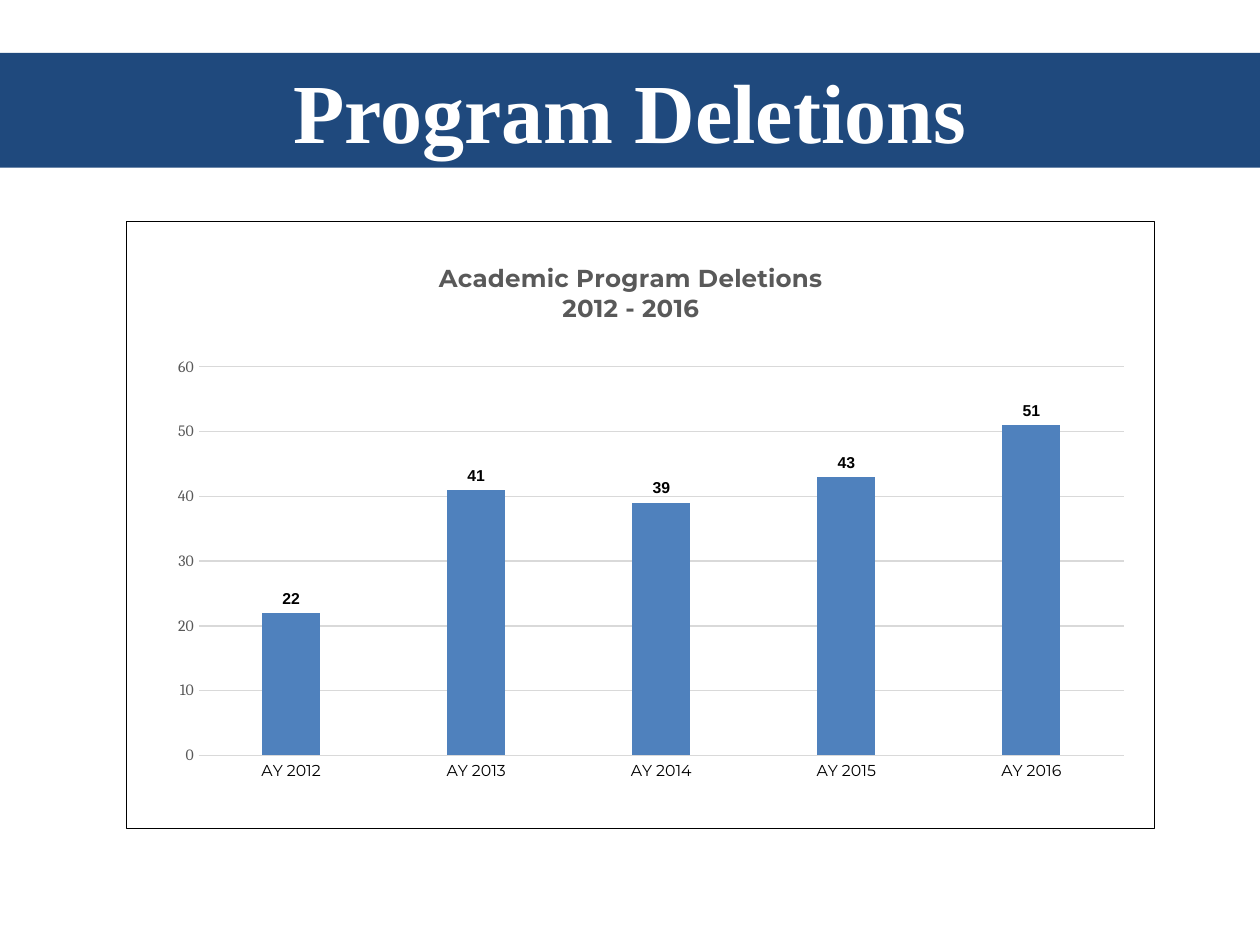
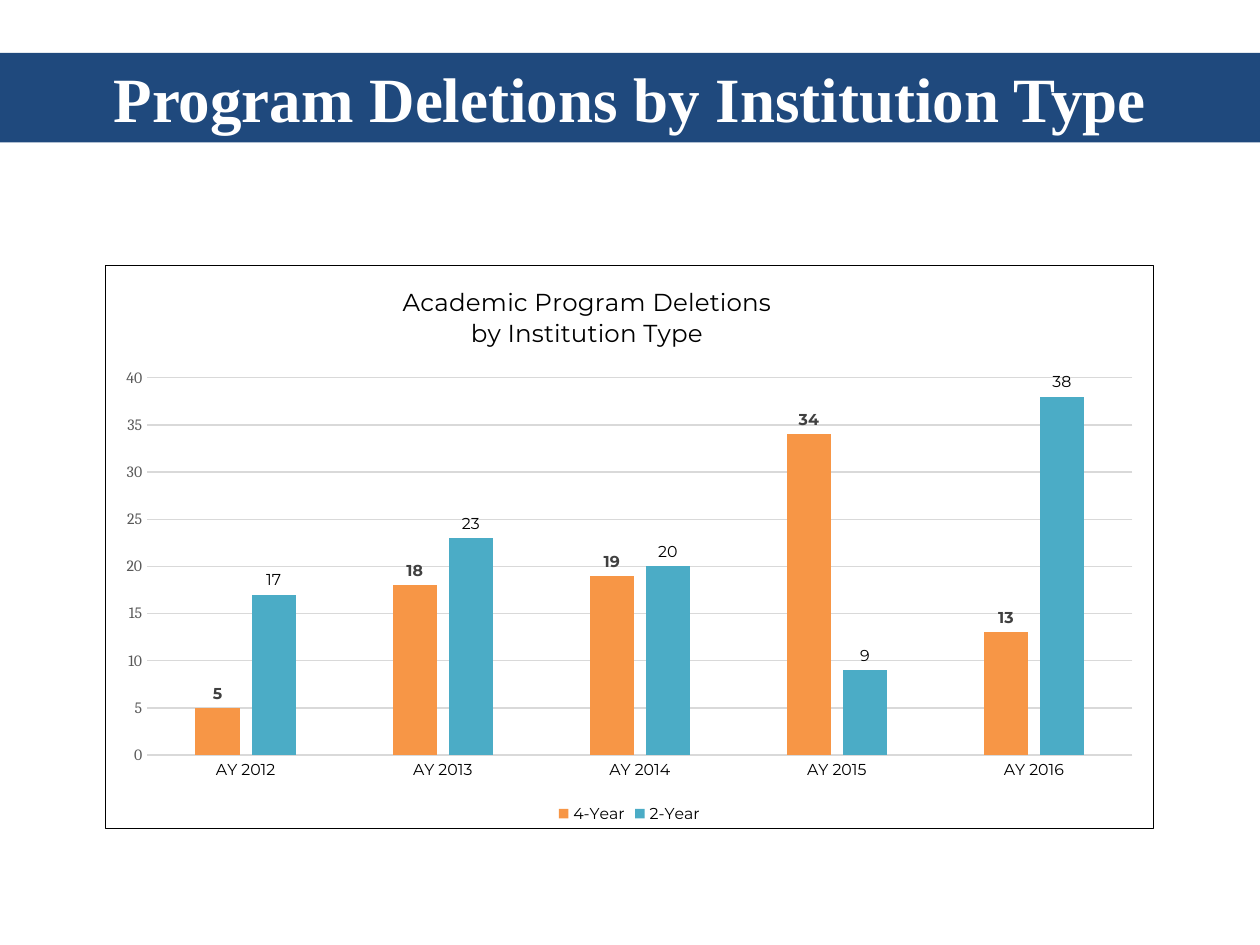
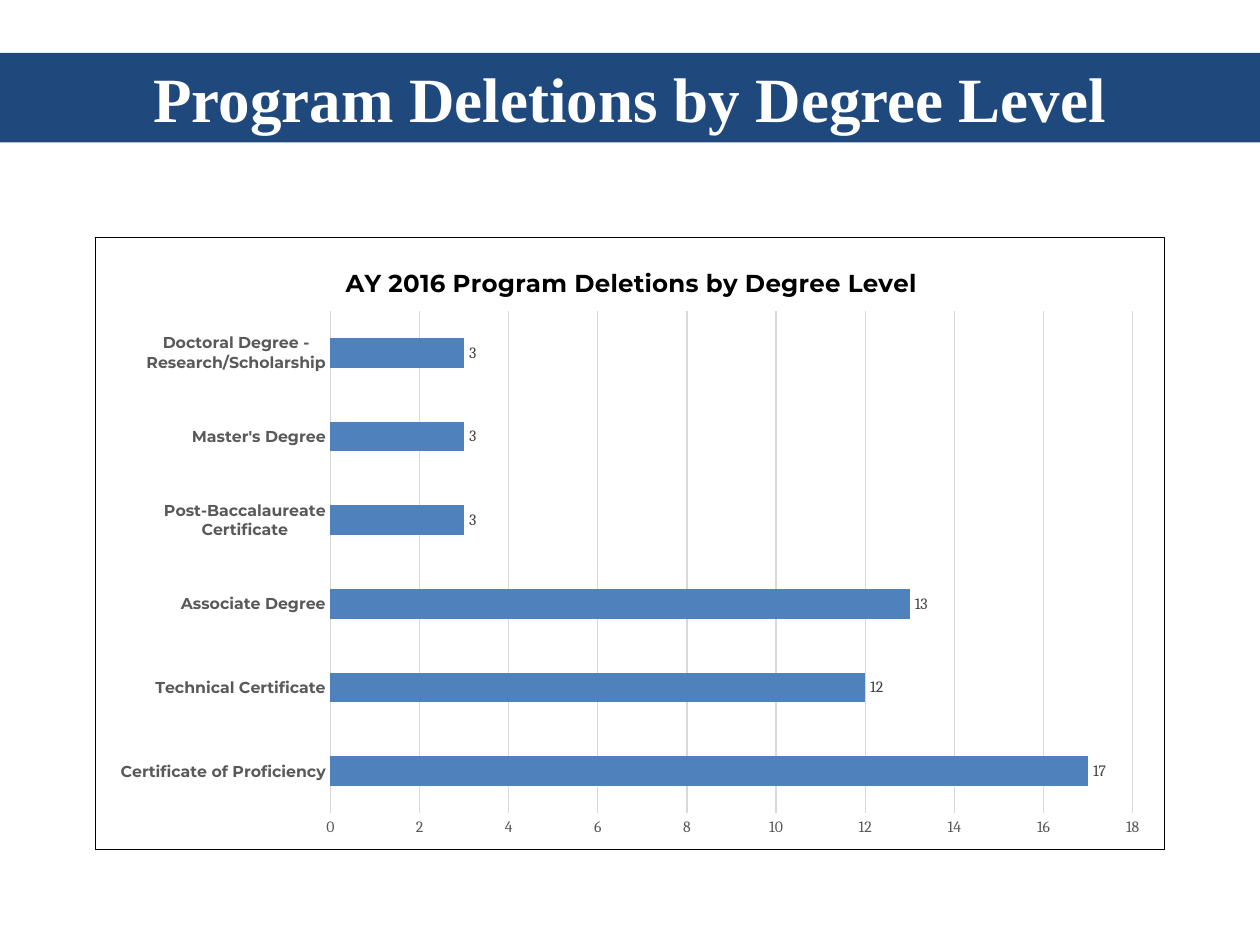
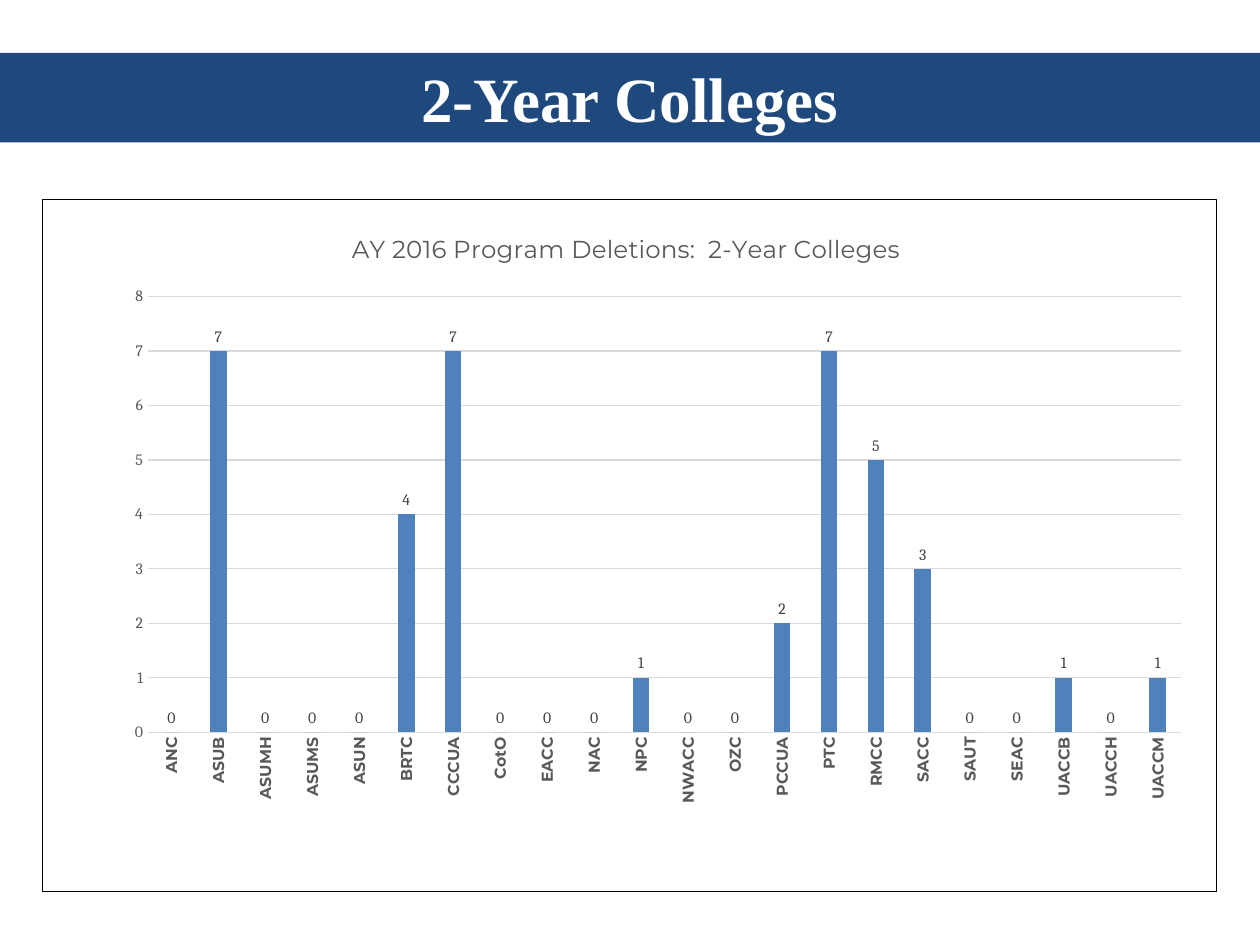
from lxml import etree
from pptx import Presentation, util as u
from pptx.chart.data import CategoryChartData
from pptx.dml.color import RGBColor
from pptx.enum import chart as ce, dml, shapes, text
from pptx.oxml.ns import qn

NAVY = RGBColor(0x1F, 0x49, 0x7D)
BLUE = RGBColor(0x4F, 0x81, 0xBD)
ORANGE = RGBColor(0xF7, 0x96, 0x46)
TEAL = RGBColor(0x4B, 0xAC, 0xC6)
WHITE = RGBColor(0xFF, 0xFF, 0xFF)
BLACK = RGBColor(0, 0, 0)
DARK = RGBColor(0x40, 0x40, 0x40)
GRAY = RGBColor(0x59, 0x59, 0x59)
PALE = RGBColor(0xD9, 0xD9, 0xD9)

WIDTH, HEIGHT = u.Inches(10), u.Inches(7.5)
HAIRLINE = u.Pt(0.75)
BAND_TOP = 0.42
YEARS = [f"AY {year}" for year in range(2012, 2017)]
COLLEGES = {
    "ANC": 0, "ASUB": 7, "ASUMH": 0, "ASUMS": 0, "ASUN": 0, "BRTC": 4,
    "CCCUA": 7, "CotO": 0, "EACC": 0, "NAC": 0, "NPC": 1, "NWACC": 0,
    "OZC": 0, "PCCUA": 2, "PTC": 7, "RMCC": 5, "SACC": 3, "SAUT": 0,
    "SEAC": 0, "UACCB": 1, "UACCH": 0, "UACCM": 1,
}
DEGREES = {
    "Certificate of Proficiency": 17,
    "Technical Certificate": 12,
    "Associate Degree": 13,
    "Post-Baccalaureate Certificate": 3,
    "Master's Degree": 3,
    "Doctoral Degree - Research/Scholarship": 3,
}


def style(name, size, color, bold=False):
    return {"name": name, "size": u.Pt(size), "bold": bold, "color": color}


VALUE_STYLE = style("Cambria", 9, GRAY)
LABEL_STYLE = style("Cambria", 9, DARK)
YEAR_STYLE = style("Montserrat", 9, BLACK)
GROUP_STYLE = style("Montserrat", 9, GRAY, True)

SLIDES = [
    {
        "heading": "Program Deletions", "heading_size": 48, "band_height": 0.91,
        "box": (1, 1.75, 8.17, 4.83), "kind": ce.XL_CHART_TYPE.COLUMN_CLUSTERED,
        "title": ["Academic Program Deletions", "2012 - 2016"],
        "title_style": style("Montserrat", 14, GRAY, True), "title_at": (0.3, 0.06),
        "plot": (0.07, 0.24, 0.9, 0.64), "gap": 219, "overlap": -27,
        "scale": (60, 10), "categories": YEARS, "category_style": YEAR_STYLE,
        "series": [("Series 1", [22, 41, 39, 43, 51], BLUE, style("Arial", 9, BLACK, True))],
    },
    {
        "heading": "Program Deletions by Institution Type",
        "box": (0.83, 2.1, 8.33, 4.48), "kind": ce.XL_CHART_TYPE.COLUMN_CLUSTERED,
        "title": ["Academic Program Deletions", "by Institution Type"],
        "title_style": style("Montserrat", 14, BLACK), "title_at": (0.28, 0.03),
        "plot": (0.04, 0.2, 0.94, 0.67), "gap": 219, "overlap": -27,
        "scale": (40, 5), "categories": YEARS, "category_style": YEAR_STYLE,
        "series": [
            ("4-Year", [5, 18, 19, 34, 13], ORANGE, style("Montserrat", 9, DARK, True)),
            ("2-Year", [17, 23, 20, 9, 38], TEAL, YEAR_STYLE),
        ],
    },
    {
        "heading": "Program Deletions by Degree Level",
        "box": (0.75, 1.88, 8.5, 4.87), "kind": ce.XL_CHART_TYPE.BAR_CLUSTERED,
        "title": ["AY 2016 Program Deletions by Degree Level"],
        "title_style": style("Montserrat", 14, BLACK, True), "title_at": (0.23, 0.04),
        "plot": (0.22, 0.12, 0.75, 0.82), "gap": 182, "overlap": 0,
        "scale": (18, 2), "categories": list(DEGREES), "category_style": GROUP_STYLE,
        "series": [("Series 1", list(DEGREES.values()), BLUE, LABEL_STYLE)],
    },
    {
        "heading": "2-Year Colleges",
        "box": (0.33, 1.58, 9.33, 5.5), "kind": ce.XL_CHART_TYPE.COLUMN_CLUSTERED,
        "title": ["AY 2016 Program Deletions:  2-Year Colleges"],
        "title_style": style("Montserrat", 14, GRAY), "title_at": (0.26, 0.04),
        "plot": (0.09, 0.14, 0.88, 0.63), "gap": 182, "overlap": 0,
        "scale": (8, 1), "categories": list(COLLEGES), "category_style": GROUP_STYLE,
        "series": [("Series 1", list(COLLEGES.values()), BLUE, LABEL_STYLE)],
        "upright": True,
    },
]


def apply_font(font, values):
    for key, value in values.items():
        if key == "color":
            font.color.rgb = value
        else:
            setattr(font, key, value)


def draw_line(line, color):
    line.color.rgb = color
    line.width = HAIRLINE


def set_layout(parent, index, shares, inner=False):
    for stale in parent.findall(qn("c:layout")):
        parent.remove(stale)
    layout = etree.Element(qn("c:layout"))
    parent.insert(index, layout)
    manual = etree.SubElement(layout, qn("c:manualLayout"))
    entries = [("layoutTarget", "inner")] if inner else []
    entries += [("xMode", "edge"), ("yMode", "edge")]
    entries += zip("xywh", shares)
    for tag, value in entries:
        etree.SubElement(manual, qn(f"c:{tag}")).set("val", str(value))


def frame_chart(chart):
    border = etree.Element(qn("c:spPr"))
    fill = etree.SubElement(border, qn("a:solidFill"))
    etree.SubElement(fill, qn("a:srgbClr")).set("val", str(WHITE))
    outline = etree.SubElement(border, qn("a:ln"), w=str(int(HAIRLINE)))
    ink = etree.SubElement(outline, qn("a:solidFill"))
    etree.SubElement(ink, qn("a:srgbClr")).set("val", str(BLACK))
    chart._chartSpace.find(qn("c:chart")).addnext(border)


def add_heading_band(slide, heading, size, height):
    band = slide.shapes.add_shape(
        shapes.MSO_SHAPE.RECTANGLE, 0, u.Inches(BAND_TOP), WIDTH, u.Inches(height))
    band.shadow.inherit = False
    band.fill.solid()
    band.fill.fore_color.rgb = NAVY
    band.line.fill.background()
    frame = band.text_frame
    frame.word_wrap = True
    frame.vertical_anchor = text.MSO_ANCHOR.TOP
    paragraph = frame.paragraphs[0]
    paragraph.alignment = text.PP_ALIGN.CENTER
    run = paragraph.add_run()
    run.text = heading
    apply_font(run.font, style("Times New Roman", size, WHITE, True))


def add_chart_title(chart, lines, font_style, position):
    chart.has_title = True
    title = chart.chart_title
    title.include_in_layout = False
    frame = title.text_frame
    for index, line in enumerate(lines):
        paragraph = frame.add_paragraph() if index else frame.paragraphs[0]
        paragraph.alignment = text.PP_ALIGN.CENTER
        run = paragraph.add_run()
        run.text = line
        apply_font(run.font, font_style)
    set_layout(title._element, 1, position)


def format_axes(chart, page):
    groups, counts = chart.category_axis, chart.value_axis
    for axis, font_style in ((groups, page["category_style"]), (counts, VALUE_STYLE)):
        axis.major_tick_mark = axis.minor_tick_mark = ce.XL_TICK_MARK.NONE
        apply_font(axis.tick_labels.font, font_style)
    groups.has_major_gridlines = False
    draw_line(groups.format.line, PALE)
    counts.format.line.fill.background()
    counts.has_major_gridlines = True
    draw_line(counts.major_gridlines.format.line, PALE)
    counts.minimum_scale = 0
    counts.maximum_scale, counts.major_unit = page["scale"]
    if page.get("upright"):
        body = groups._element.find(qn("c:txPr")).find(qn("a:bodyPr"))
        body.set("rot", "-5400000")
        body.set("vert", "horz")


def format_bars(plot, page):
    plot.vary_by_categories = False
    plot.gap_width = page["gap"]
    plot.overlap = page["overlap"]
    for bars, (_, _, color, font_style) in zip(plot.series, page["series"]):
        bars.invert_if_negative = False
        bars.format.fill.solid()
        bars.format.fill.fore_color.rgb = color
        labels = bars.data_labels
        labels.show_value = True
        labels.position = ce.XL_LABEL_POSITION.OUTSIDE_END
        apply_font(labels.font, font_style)


def add_deletions_chart(slide, page):
    data = CategoryChartData()
    data.categories = page["categories"]
    for name, counts, _, _ in page["series"]:
        data.add_series(name, counts)
    box = [u.Inches(length) for length in page["box"]]
    chart = slide.shapes.add_chart(page["kind"], *box, data).chart
    frame_chart(chart)
    apply_font(chart.font, style("Cambria", 10, BLACK))
    add_chart_title(chart, page["title"], page["title_style"], page["title_at"])
    format_axes(chart, page)
    format_bars(chart.plots[0], page)
    set_layout(chart._chartSpace.find(".//" + qn("c:plotArea")), 0, page["plot"], inner=True)
    chart.has_legend = len(page["series"]) > 1
    if chart.has_legend:
        chart.legend.position = ce.XL_LEGEND_POSITION.BOTTOM
        chart.legend.include_in_layout = False
        apply_font(chart.legend.font, YEAR_STYLE)


def main():
    deck = Presentation()
    deck.slide_width, deck.slide_height = WIDTH, HEIGHT
    for page in SLIDES:
        slide = deck.slides.add_slide(deck.slide_layouts[6])
        add_heading_band(slide, page["heading"], page.get("heading_size", 36),
                         page.get("band_height", 0.71))
        add_deletions_chart(slide, page)
    deck.save("out.pptx")


if __name__ == "__main__":
    main()
